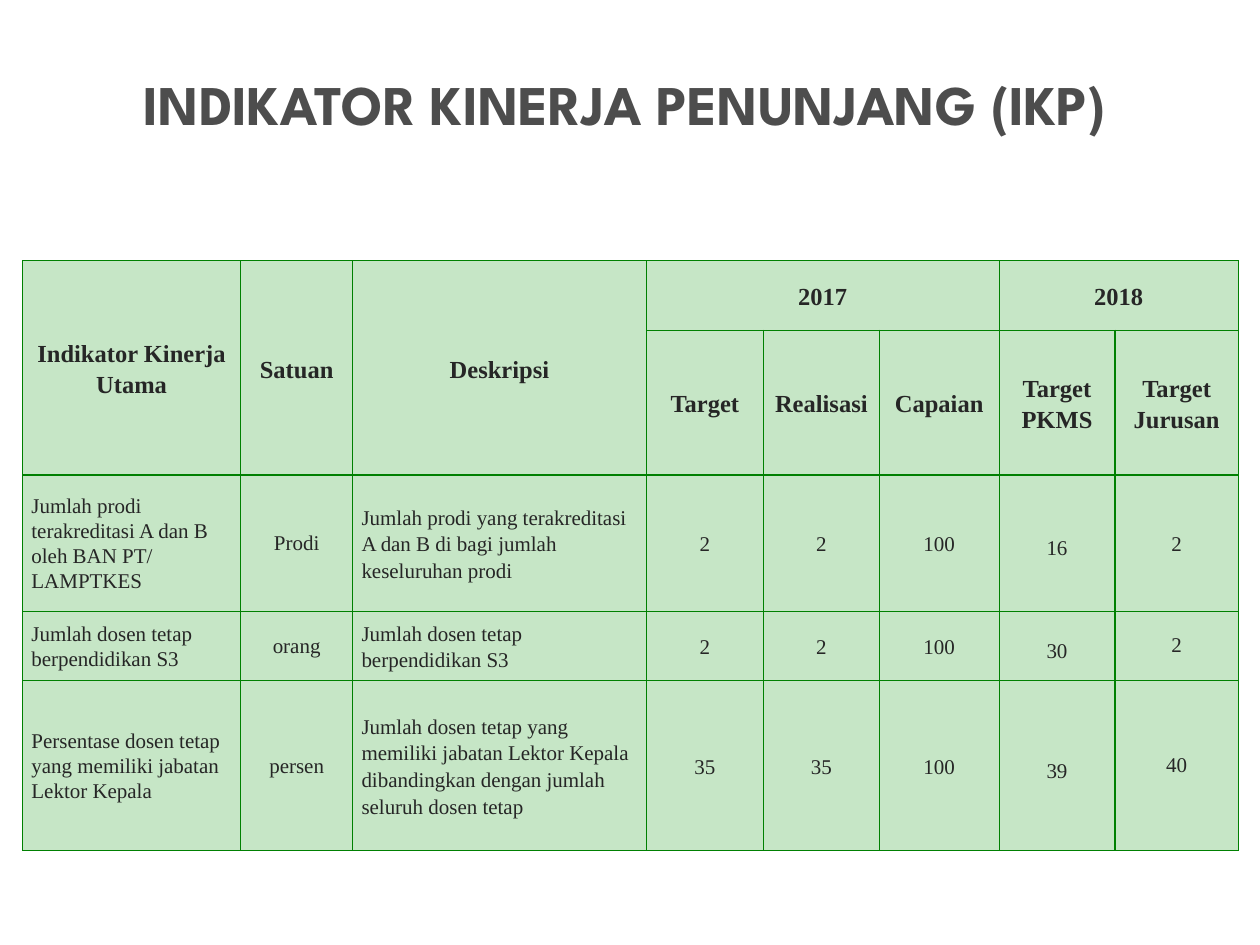
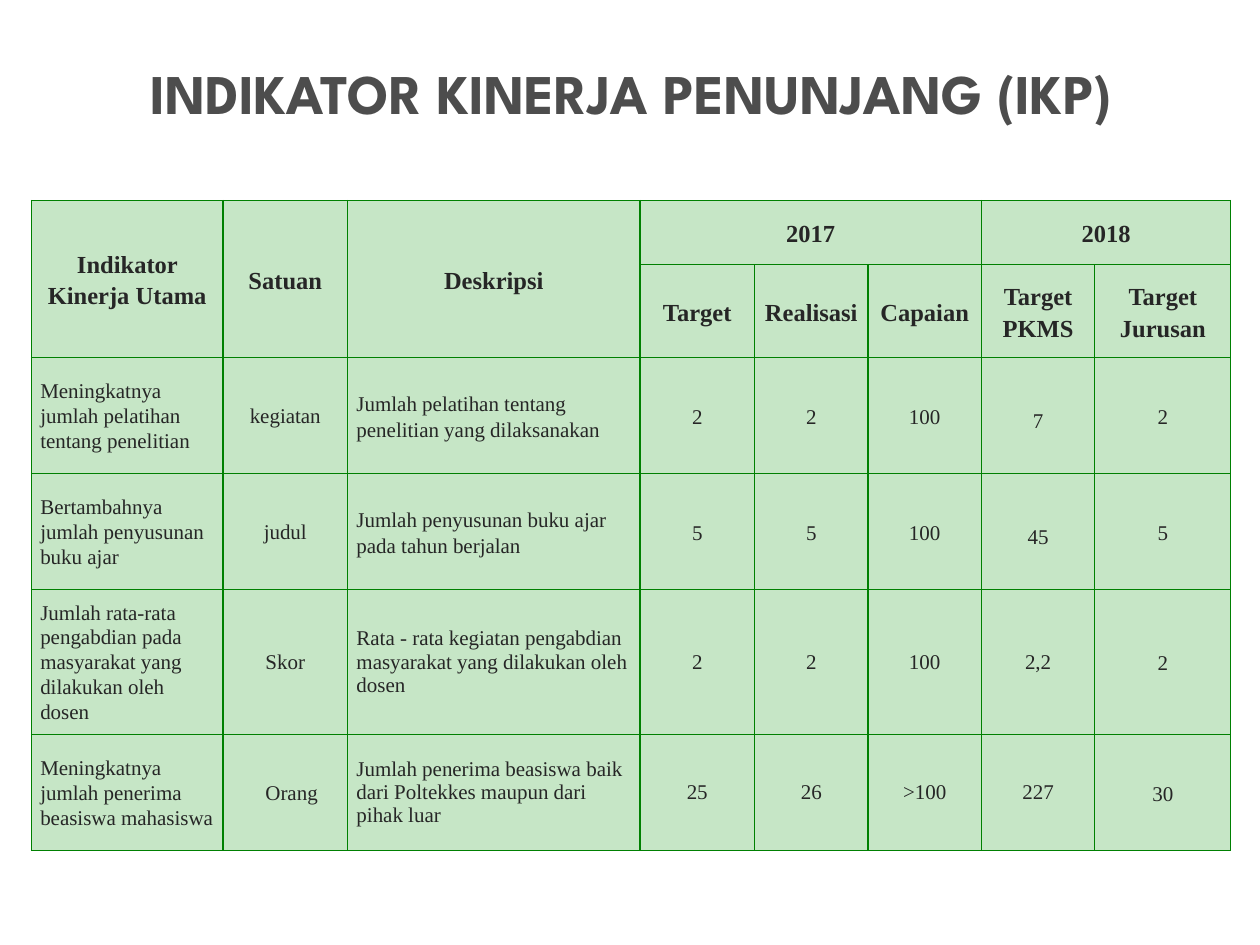
from pptx import Presentation
from pptx.dml.color import RGBColor
from pptx.enum.text import MSO_ANCHOR, MSO_AUTO_SIZE, PP_ALIGN
from pptx.util import Inches, Pt
from lxml import etree

TITLE_GREY = RGBColor(0x4D, 0x4D, 0x4D)
TEXT_DARK = RGBColor(0x26, 0x26, 0x26)
CELL_GREEN = RGBColor(0xC6, 0xE6, 0xC6)
BORDER_GREEN = RGBColor(0x00, 0x80, 0x01)
TITLE_FONT, TABLE_FONT = "League Spartan", "Times New Roman"
CENTER, LEFT = PP_ALIGN.CENTER, PP_ALIGN.LEFT
MIDDLE, NO_FIT = MSO_ANCHOR.MIDDLE, MSO_AUTO_SIZE.NONE
A = "http://schemas.openxmlformats.org/drawingml/2006/main"

TITLE = "INDIKATOR KINERJA PENUNJANG (IKP)"
TITLE_SIZE = (9.37, 0.87)

# Shared header: first row, column -> (text, rows spanned, columns spanned)
TOP_HEADER = {
    0: ("Indikator Kinerja Utama", 2, 1),
    1: ("Satuan", 2, 1),
    2: ("Deskripsi", 2, 1),
    3: ("2017", 1, 3),
    6: ("2018", 1, 2),
}
SUB_HEADER = ["Target", "Realisasi", "Capaian", "Target PKMS", "Target Jurusan"]
TEXT_COLS = (0, 2)

# Line spacing of the eight columns in a body row
LOOSE = (1.07, 1.07, 1.15, 1.15, 1.15, 1.15, 1.5, 1.15)
LOOSE_SINGLE_END = LOOSE[:7] + (1.0,)
TIGHT = (1.07, 1.07, 1.0, 1.0, 1.0, 1.0, 1.0, 1.15)

SLIDES = [
    {
        "title_at": (0.28, 0.38),
        "table_at": (0.18, 2.07),
        "cols": [1.73, 0.89, 2.33, 0.93, 0.92, 0.95, 0.92, 0.98],
        "heights": [0.55, 1.15, 1.08, 0.55, 1.35],
        "rows": [
            (LOOSE, ["Jumlah prodi terakreditasi A dan B oleh BAN PT/ LAMPTKES",
                     "Prodi",
                     "Jumlah prodi yang terakreditasi A dan B di bagi jumlah "
                     "keseluruhan prodi",
                     "2", "2", "100", "16", "2"]),
            (LOOSE_SINGLE_END, ["Jumlah dosen tetap berpendidikan S3", "orang",
                                "Jumlah dosen tetap berpendidikan S3",
                                "2", "2", "100", "30", "2"]),
            (LOOSE_SINGLE_END, ["Persentase dosen tetap yang memiliki jabatan "
                                "Lektor Kepala",
                                "persen",
                                "Jumlah dosen tetap yang memiliki jabatan Lektor "
                                "Kepala dibandingkan dengan jumlah seluruh dosen "
                                "tetap",
                                "35", "35", "100", "39", "40"]),
        ],
    },
    {
        "title_at": (0.33, 0.3),
        "table_at": (0.25, 1.59),
        "cols": [1.52, 0.99, 2.32, 0.91, 0.9, 0.9, 0.9, 1.08],
        "heights": [0.51, 0.74, 0.92, 0.92, 1.15, 0.92],
        "rows": [
            (LOOSE, ["Meningkatnya jumlah pelatihan tentang penelitian",
                     "kegiatan",
                     "Jumlah pelatihan tentang penelitian yang dilaksanakan",
                     "2", "2", "100", "7", "2"]),
            (LOOSE, ["Bertambahnya jumlah penyusunan buku ajar", "judul",
                     "Jumlah penyusunan buku ajar pada tahun berjalan",
                     "5", "5", "100", "45", "5"]),
            (TIGHT, ["Jumlah rata-rata pengabdian pada masyarakat yang dilakukan "
                     "oleh dosen",
                     "Skor",
                     "Rata - rata kegiatan pengabdian masyarakat yang dilakukan "
                     "oleh dosen",
                     "2", "2", "100", "2,2", "2"]),
            (TIGHT, ["Meningkatnya jumlah penerima beasiswa mahasiswa", "Orang",
                     "Jumlah penerima beasiswa baik dari Poltekkes maupun dari "
                     "pihak luar",
                     "25", "26", ">100", "227", "30"]),
        ],
        "indented": (5, 1),
    },
]


def add_run(p, text, font, size, color, bold):
    r = p.add_run()
    r.text = text
    r.font.name = font
    r.font.size = Pt(size)
    r.font.color.rgb = color
    r.font.bold = bold


def add_title(s, at):
    title = s.shapes.title
    title.left, title.top = (Inches(v) for v in at)
    title.width, title.height = (Inches(v) for v in TITLE_SIZE)
    tf = title.text_frame
    tf.word_wrap = True
    tf.auto_size = NO_FIT
    tf.vertical_anchor = MIDDLE
    p = tf.paragraphs[0]
    p.alignment = CENTER
    add_run(p, TITLE, TITLE_FONT, 32, TITLE_GREY, True)


def style_cell(cell):
    cell.vertical_anchor = MIDDLE
    cell.margin_left = cell.margin_right = Inches(0.07)
    cell.margin_top = cell.margin_bottom = 0
    # Borders come before the fill in the cell properties
    tc_pr = cell._tc.get_or_add_tcPr()
    for side in ("lnL", "lnR", "lnT", "lnB"):
        ln = etree.SubElement(tc_pr, f"{{{A}}}{side}", w=str(Pt(0.75)))
        fill = etree.SubElement(ln, f"{{{A}}}solidFill")
        etree.SubElement(fill, f"{{{A}}}srgbClr", val=str(BORDER_GREEN))
    cell.fill.solid()
    cell.fill.fore_color.rgb = CELL_GREEN


def write_cell(cell, text, spacing=1.15, align=CENTER, size=14, bold=True):
    p = cell.text_frame.paragraphs[0]
    p.alignment = align
    p.line_spacing = spacing
    add_run(p, text, TABLE_FONT, size, TEXT_DARK, bold)


def add_indicator_table(s, at, cols, heights, rows, indented=None):
    left, top = at
    frame = s.shapes.add_table(len(heights), len(cols), Inches(left), Inches(top),
                               Inches(sum(cols)), Inches(sum(heights)))
    table = frame.table
    table.first_row = table.horz_banding = False
    for column, width in zip(table.columns, cols):
        column.width = Inches(width)
    for row, height in zip(table.rows, heights):
        row.height = Inches(height)
    for cell in table.iter_cells():
        style_cell(cell)

    # Two header rows
    for c, (text, row_span, col_span) in TOP_HEADER.items():
        cell = table.cell(0, c)
        if row_span * col_span > 1:
            cell.merge(table.cell(row_span - 1, c + col_span - 1))
        write_cell(cell, text)
    for c, text in enumerate(SUB_HEADER, start=3):
        write_cell(table.cell(1, c), text)

    # Indicators
    for r, (spacings, texts) in enumerate(rows, start=2):
        for c, (spacing, text) in enumerate(zip(spacings, texts)):
            align = LEFT if c in TEXT_COLS else CENTER
            write_cell(table.cell(r, c), text, spacing, align, 12, False)
    if indented:
        p = table.cell(*indented).text_frame.paragraphs[0]
        p._p.get_or_add_pPr().set("indent", str(Inches(0.1)))


def main():
    prs = Presentation()
    prs.slide_width, prs.slide_height = Inches(10), Inches(7.5)
    title_only = prs.slide_layouts[5]
    for data in SLIDES:
        s = prs.slides.add_slide(title_only)
        add_title(s, data["title_at"])
        add_indicator_table(s, data["table_at"], data["cols"], data["heights"],
                            data["rows"], data.get("indented"))
    prs.save("out.pptx")


if __name__ == "__main__":
    main()
